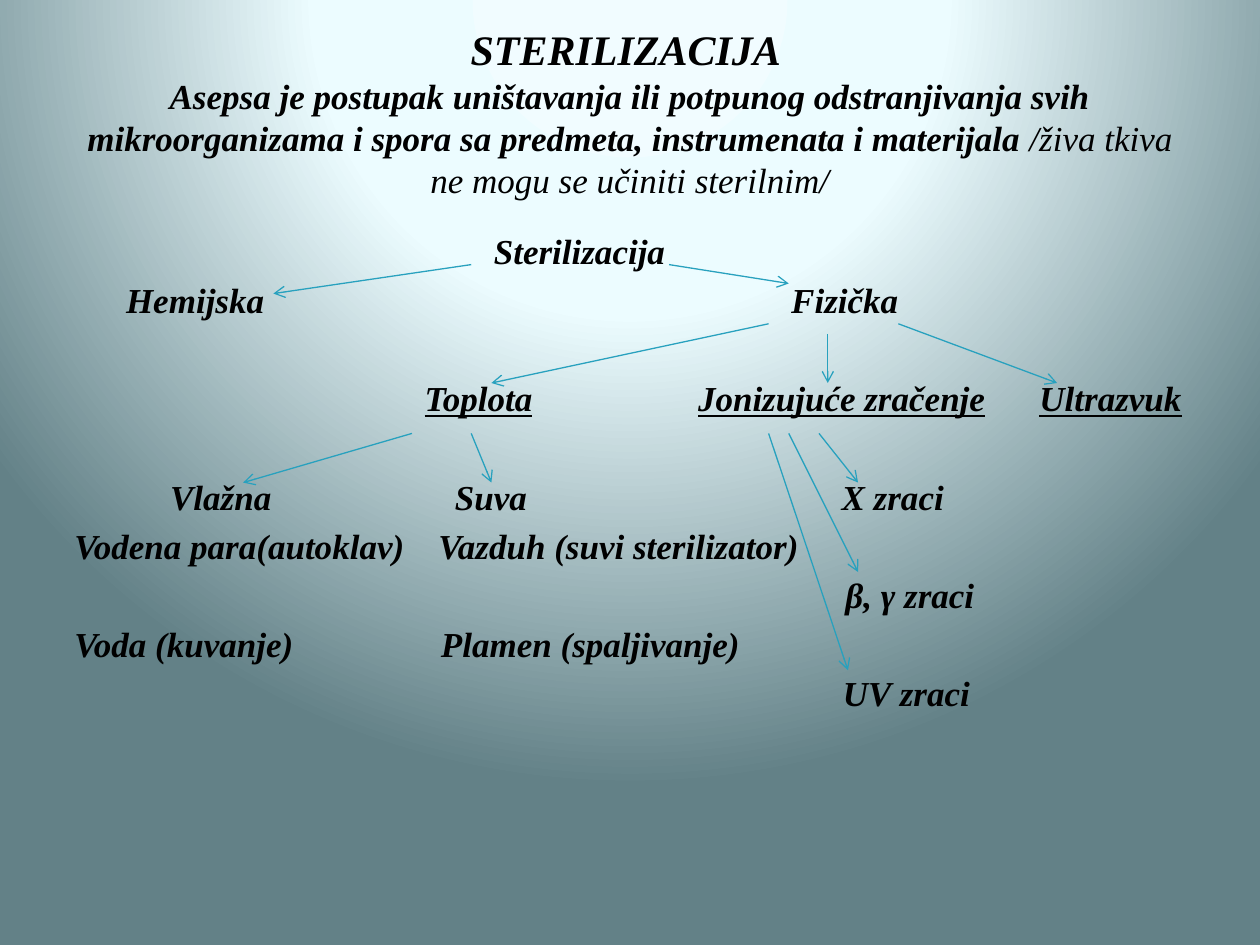
from pptx import Presentation
from pptx.dml.color import RGBColor
from pptx.enum.shapes import MSO_CONNECTOR
from pptx.enum.text import MSO_ANCHOR, PP_ALIGN
from pptx.oxml import parse_xml
from pptx.oxml.ns import nsdecls, qn
from pptx.util import Inches, Pt
from lxml import etree

STRAIGHT = MSO_CONNECTOR.STRAIGHT
MIDDLE = MSO_ANCHOR.MIDDLE
CENTER = PP_ALIGN.CENTER

FONT = "Times New Roman"
COLORS = {
    "text": "000000",
    "arrow": "28A1BE",
    "glow": "F1FCFF",
    "light": "ECFCFF",
    "edge": "638187",
}
FIRST_ROW = 1.82
ROW_STEP = 0.39

# row, left, width, text
LABELS = [
    (0, 3.92, 1.5, "Sterilizacija"),
    (1, 1.0, 1.25, "Hemijska"),
    (1, 6.28, 1.0, "Fizička"),
    (3, 3.37, 1.0, "Toplota"),
    (3, 5.54, 2.5, "Jonizujuće zračenje"),
    (3, 8.25, 1.3, "Ultrazvuk"),
    (5, 1.35, 1.0, "Vlažna"),
    (5, 3.61, 0.75, "Suva"),
    (5, 6.68, 1.0, "X zraci"),
    (6, 0.59, 2.8, "Vodena para(autoklav)"),
    (6, 3.48, 3.1, "Vazduh (suvi sterilizator)"),
    (7, 6.71, 1.25, "β, γ zraci"),
    (8, 0.59, 2.0, "Voda (kuvanje)"),
    (8, 3.5, 2.6, "Plamen (spaljivanje)"),
    (9, 6.69, 1.25, "UV zraci"),
]
UNDERLINED_ROW = 3

ARROWS = [
    (3.74, 2.1, 2.17, 2.33),
    (5.31, 2.1, 6.26, 2.25),
    (6.1, 2.57, 3.9, 3.04),
    (6.57, 2.65, 6.57, 3.04),
    (7.13, 2.57, 8.39, 3.04),
    (3.27, 3.44, 1.93, 3.83),
    (3.74, 3.44, 3.9, 3.83),
    (6.5, 3.44, 6.81, 3.83),
    (6.26, 3.44, 6.81, 4.54),
    (6.1, 3.44, 6.73, 5.32),
]


def set_background(page):
    stops = "".join(
        f'<a:gs pos="{position * 1000}"><a:srgbClr val="{COLORS[name]}"/></a:gs>'
        for position, name in ((0, "glow"), (40, "light"), (100, "edge"))
    )
    background = parse_xml(
        f'<p:bg {nsdecls("p", "a")}><p:bgPr><a:gradFill><a:gsLst>{stops}</a:gsLst>'
        '<a:path path="circle">'
        '<a:fillToRect l="50000" t="-80000" r="50000" b="180000"/></a:path>'
        "</a:gradFill><a:effectLst/></p:bgPr></p:bg>"
    )
    page.element.cSld.insert(0, background)


def style_span(span, size=20, bold=True, underline=False):
    font = span.font
    font.name = FONT
    font.size = Pt(size)
    font.bold = bold
    font.italic = True
    font.underline = underline
    font.color.rgb = RGBColor.from_string(COLORS["text"])


def add_title(page):
    box = page.shapes.add_textbox(Inches(0.5), 0, Inches(9), Inches(1.78))
    frame = box.text_frame
    frame.word_wrap = True
    frame.vertical_anchor = MIDDLE
    para = frame.paragraphs[0]
    para.alignment = CENTER
    para.text = (
        "STERILIZACIJA \vAsepsa je postupak uništavanja ili potpunog "
        "odstranjivanja svih mikroorganizama i spora sa predmeta, "
        "instrumenata i materijala "
    )
    heading, definition = para.runs
    remark = para.add_run()
    remark.text = "/živa tkiva ne mogu se učiniti sterilnim/"
    style_span(heading, size=24)
    style_span(definition)
    style_span(remark, bold=False)


def add_label(page, row, left, width, text):
    top = FIRST_ROW + row * ROW_STEP
    box = page.shapes.add_textbox(
        Inches(left), Inches(top), Inches(width), Inches(ROW_STEP)
    )
    frame = box.text_frame
    frame.word_wrap = True
    frame.margin_left = frame.margin_right = 0
    frame.margin_top = frame.margin_bottom = 0
    frame.text = text
    style_span(frame.paragraphs[0].runs[0], underline=row == UNDERLINED_ROW)


def add_arrow(page, *ends):
    arrow = page.shapes.add_connector(STRAIGHT, *map(Inches, ends))
    arrow.line.color.rgb = RGBColor.from_string(COLORS["arrow"])
    arrow.line.width = Pt(0.75)
    properties = arrow.element.spPr
    etree.SubElement(properties.find(qn("a:ln")), qn("a:tailEnd"), type="arrow")
    etree.SubElement(properties, qn("a:effectLst"))


def main():
    deck = Presentation()
    deck.slide_width, deck.slide_height = Inches(10), Inches(7.5)
    page = deck.slides.add_slide(deck.slide_layouts[6])
    set_background(page)
    add_title(page)
    for label in LABELS:
        add_label(page, *label)
    for ends in ARROWS:
        add_arrow(page, *ends)
    deck.save("out.pptx")


if __name__ == "__main__":
    main()
